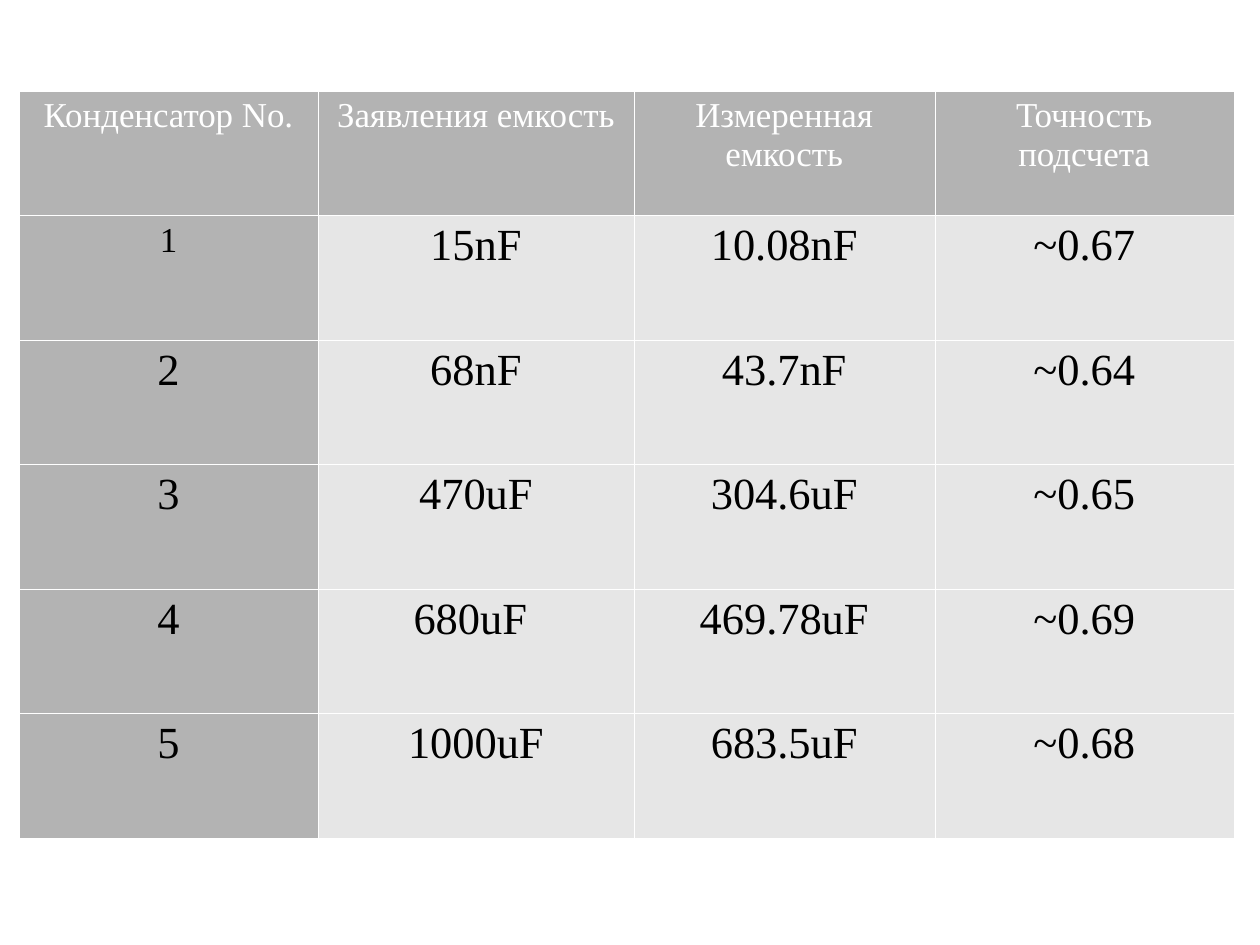
"""Build a slide with a table of stated and measured capacitor values."""
from dataclasses import dataclass

import lxml.etree
import pptx
import pptx.dml.color
import pptx.enum.text
import pptx.oxml.ns
import pptx.util

Pt = pptx.util.Pt
COLORS = {"head": "B3B3B3", "body": "E6E6E6", "white": "FFFFFF", "black": "000000"}
FONT = "Times New Roman"
LEFT, TOP = 11.9, 57.2
WIDTHS = (188.4, 198.9, 189.6, 188.4)
HEIGHT = 78.45
BORDER = 0.06
ROWS = (
    ("Конденсатор No.", "Заявления емкость", "Измеренная емкость", "Точность подсчета"),
    ("1", "15nF", "10.08nF", "~0.67"),
    ("2", "68nF", "43.7nF", "~0.64"),
    ("3", "470uF", "304.6uF", "~0.65"),
    ("4", "680uF ", "469.78uF", "~0.69"),
    ("5", "1000uF", "683.5uF", "~0.68"),
)


@dataclass(frozen=True)
class Look:
    """Size and colours of one kind of cell."""

    size: float
    ink: str
    fill: str


TITLE = Look(22, "white", "head")
FIRST = Look(22, "black", "head")
LABEL = Look(28, "black", "head")
VALUE = Look(28, "black", "body")


def pick_look(row: int, col: int) -> Look:
    """Choose the look from the place in the grid."""
    if row == 0:
        return TITLE
    if col > 0:
        return VALUE
    return FIRST if row == 1 else LABEL


def color(name: str) -> pptx.dml.color.RGBColor:
    """Turn a colour name into an RGB value."""
    return pptx.dml.color.RGBColor.from_string(COLORS[name])


def add_lines(cell: pptx.table._Cell) -> None:
    """Put a thin white line on each side of a cell."""
    qn = pptx.oxml.ns.qn
    props = cell._tc.get_or_add_tcPr()
    for place, side in enumerate(("lnL", "lnR", "lnT", "lnB")):
        line = lxml.etree.Element(qn(f"a:{side}"), w=str(Pt(BORDER)))
        solid = lxml.etree.SubElement(line, qn("a:solidFill"))
        lxml.etree.SubElement(solid, qn("a:srgbClr"), val=COLORS["white"])
        props.insert(place, line)


def draw_cell(cell: pptx.table._Cell, text: str, look: Look) -> None:
    """Fill one cell and set its text."""
    cell.text = text
    cell.fill.solid()
    cell.fill.fore_color.rgb = color(look.fill)
    para = cell.text_frame.paragraphs[0]
    para.alignment = pptx.enum.text.PP_ALIGN.CENTER
    para.font.name = FONT
    para.font.size = Pt(look.size)
    para.font.color.rgb = color(look.ink)
    add_lines(cell)


def main() -> None:
    """Draw the table and save the deck."""
    deck = pptx.Presentation()
    deck.slide_width, deck.slide_height = Pt(793.7), Pt(595.3)
    slide = deck.slides.add_slide(deck.slide_layouts[6])
    frame = slide.shapes.add_table(
        len(ROWS), len(WIDTHS), Pt(LEFT), Pt(TOP), Pt(sum(WIDTHS)), Pt(HEIGHT * len(ROWS))
    )
    table = frame.table
    table.first_row = table.horz_banding = False
    for column, width in zip(table.columns, WIDTHS):
        column.width = Pt(width)
    for row, texts in enumerate(ROWS):
        table.rows[row].height = Pt(HEIGHT)
        for col, text in enumerate(texts):
            draw_cell(table.cell(row, col), text, pick_look(row, col))
    deck.save("out.pptx")


if __name__ == "__main__":
    main()
